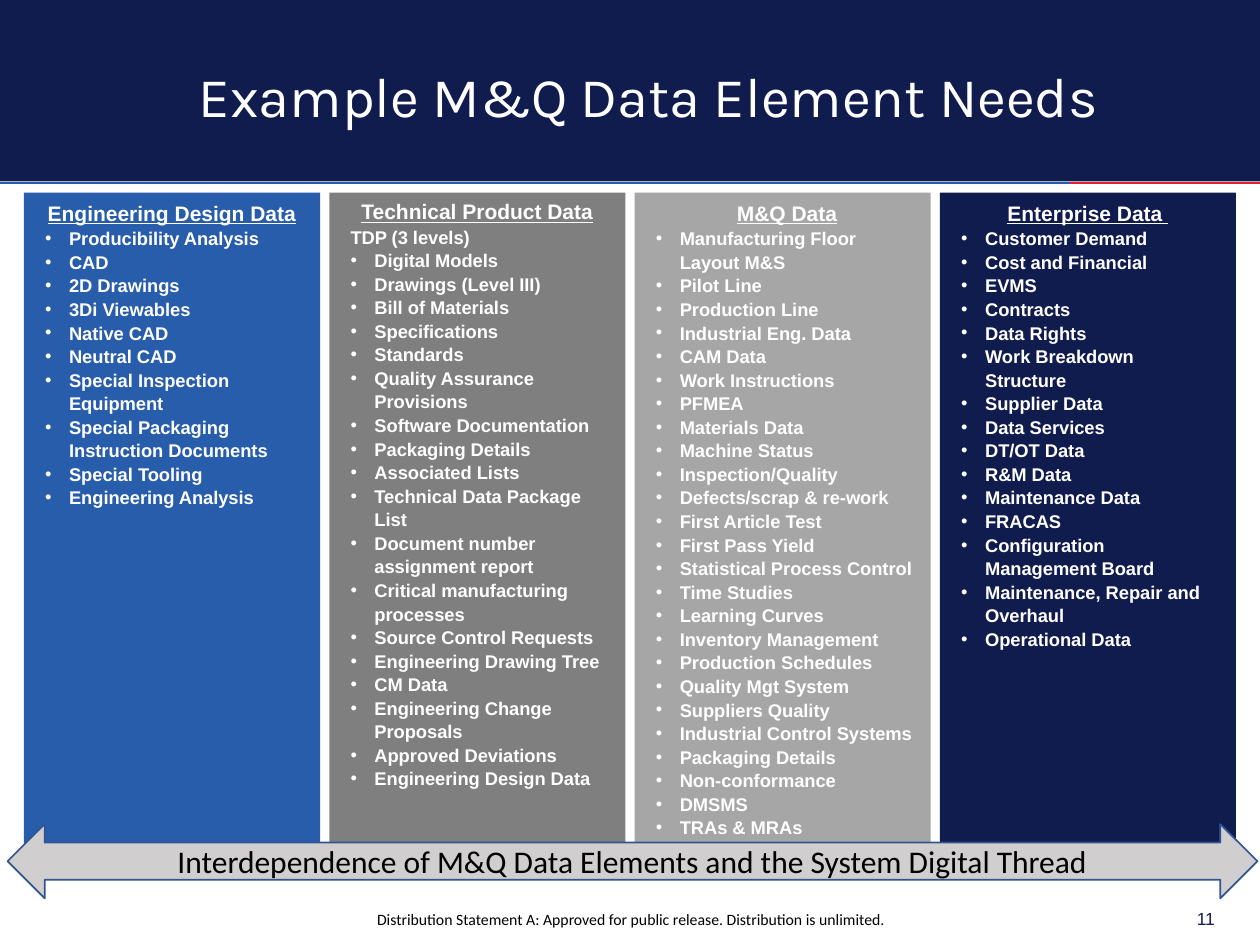
"""Build a slide with four columns of data needs above a wide arrow."""
from lxml import etree
from pptx import Presentation
from pptx.dml.color import RGBColor
from pptx.enum.shapes import MSO_CONNECTOR, MSO_SHAPE
from pptx.enum.text import MSO_ANCHOR, PP_ALIGN
from pptx.oxml.ns import qn
from pptx.util import Inches, Pt

RECT, ARROW = MSO_SHAPE.RECTANGLE, MSO_SHAPE.LEFT_RIGHT_ARROW
LINE = MSO_CONNECTOR.STRAIGHT
LEFT, MID, RIGHT = PP_ALIGN.LEFT, PP_ALIGN.CENTER, PP_ALIGN.RIGHT
TOP, CENTRE = MSO_ANCHOR.TOP, MSO_ANCHOR.MIDDLE

NAVY = RGBColor(0x11, 0x1C, 0x4E)
BLUE = RGBColor(0x27, 0x5D, 0xAB)
RULE = RGBColor(0x26, 0x5C, 0xAA)
RED = RGBColor(0xE2, 0x1E, 0x26)
DARK = RGBColor(0x7F, 0x7F, 0x7F)
GREY = RGBColor(0xA6, 0xA6, 0xA6)
PALE = RGBColor(0xD0, 0xCE, 0xCE)
EDGE = RGBColor(0x32, 0x54, 0x91)
WHITE = RGBColor(0xFF, 0xFF, 0xFF)
BLACK = RGBColor(0, 0, 0)

WIDE, HIGH = Inches(10), Inches(7.5)
COLS, ROWS = 100, 75
SIDE, BAR, INSET = 1.9, 23.5, 0.7
HANG = Inches(0.19)

HEAD = {"name": "Arial", "size": Pt(12), "bold": True, "underline": True}
ITEM = {"name": "Arial", "size": Pt(10.5), "bold": True}
TITLE = {"name": "Karla", "size": Pt(32)}
NOTE = {"name": "Calibri", "size": Pt(9)}
PAGE = {"name": "Arial", "size": Pt(10)}
BAND = {"name": "Calibri", "size": Pt(18)}

LISTS = [
    {"head": "Engineering Design Data", "fill": BLUE, "width": 22.1, "lead": [],
     "items": [
         "Producibility Analysis", "CAD", "2D Drawings", "3Di Viewables",
         "Native CAD", "Neutral CAD", "Special Inspection Equipment",
         "Special Packaging Instruction Documents", "Special Tooling",
         "Engineering Analysis"]},
    {"head": "Technical Product Data", "fill": DARK, "width": 22.1,
     "lead": ["TDP (3 levels)"],
     "items": [
         "Digital Models", "Drawings (Level III)", "Bill of Materials",
         "Specifications", "Standards", "Quality Assurance Provisions",
         "Software Documentation", "Packaging Details", "Associated Lists",
         "Technical Data Package List", "Document number assignment report",
         "Critical manufacturing processes", "Source Control Requests",
         "Engineering Drawing Tree", "CM Data", "Engineering Change Proposals",
         "Approved Deviations", "Engineering Design Data"]},
    {"head": "M&Q Data", "fill": GREY, "width": 22.8, "lead": [],
     "items": [
         "Manufacturing Floor Layout M&S", "Pilot Line", "Production Line",
         "Industrial Eng. Data", "CAM Data", "Work Instructions", "PFMEA",
         "Materials Data", "Machine Status", "Inspection/Quality",
         "Defects/scrap & re-work", "First Article Test", "First Pass Yield",
         "Statistical Process Control", "Time Studies", "Learning Curves",
         "Inventory Management", "Production Schedules", "Quality Mgt System",
         "Suppliers Quality", "Industrial Control Systems",
         "Packaging Details", "Non-conformance", "DMSMS", "TRAs & MRAs"]},
    {"head": "Enterprise Data ", "fill": NAVY, "width": 22.1, "lead": [],
     "items": [
         "Customer Demand", "Cost and Financial", "EVMS", "Contracts",
         "Data Rights", "Work Breakdown Structure", "Supplier Data",
         "Data Services", "DT/OT Data", "R&M Data", "Maintenance Data",
         "FRACAS", "Configuration Management Board",
         "Maintenance, Repair and Overhaul", "Operational Data"]},
]


def grid(x, y, w, h):
    """Turn grid columns and rows into slide lengths."""
    return (round(x * WIDE / COLS), round(y * HIGH / ROWS),
            round(w * WIDE / COLS), round(h * HIGH / ROWS))


def style(para, look, color, align=LEFT, space=1.0):
    """Set the font, alignment and line spacing of a paragraph."""
    para.alignment, para.line_spacing = align, space
    for key, value in look.items():
        setattr(para.font, key, value)
    para.font.color.rgb = color


def bullet(para):
    """Give a paragraph a round bullet with a hanging indent."""
    props = para._p.get_or_add_pPr()
    props.set("marL", str(HANG))
    props.set("indent", str(-HANG))
    etree.SubElement(props, qn("a:buFont")).set("typeface", "Arial")
    etree.SubElement(props, qn("a:buChar")).set("char", "•")


def shape(slide, kind, cell, fill, edge=None):
    """Add a filled preset shape."""
    form = slide.shapes.add_shape(kind, *grid(*cell))
    form.shadow.inherit = False
    form.fill.solid()
    form.fill.fore_color.rgb = fill
    if edge is None:
        form.line.fill.background()
    else:
        form.line.color.rgb = edge
        form.line.width = Pt(1)
    return form


def rule(slide, start, end, row, color):
    """Add a level line between two grid columns."""
    x, y, w, _ = grid(start, row, end - start, 0)
    line = slide.shapes.add_connector(LINE, x, y, x + w, y)
    line.line.color.rgb = color
    line.line.width = Pt(1)
    etree.SubElement(line._element.spPr, qn("a:effectLst"))


def frame(slide, cell, anchor=TOP):
    """Add a wrapping text box and return its frame."""
    text = slide.shapes.add_textbox(*grid(*cell)).text_frame
    text.word_wrap, text.vertical_anchor = True, anchor
    return text


def label(text, words, look, color, align=LEFT, space=1.0):
    """Write one paragraph into a text frame."""
    para = text.paragraphs[0]
    para.text = words
    style(para, look, color, align, space)


def column(slide, left, data):
    """Add one coloured panel with its heading and list."""
    shape(slide, RECT, (left, 15.3, BAR, 54.4), data["fill"])
    text = frame(slide, (left + INSET, 15.3, data["width"], 54.3))
    space = 1.0 if data["lead"] else 1.07
    label(text, data["head"], HEAD, WHITE, MID, space)
    for index, words in enumerate(data["lead"] + data["items"]):
        para = text.add_paragraph()
        para.text = words
        if index >= len(data["lead"]):
            bullet(para)
        style(para, ITEM, WHITE, space=1.07)


def main():
    """Build and save the slide."""
    deck = Presentation()
    deck.slide_width, deck.slide_height = WIDE, HIGH
    slide = deck.slides.add_slide(deck.slide_layouts[6])
    shape(slide, RECT, (0, 0, COLS, 14.4), NAVY)
    rule(slide, 0, 84.9, 14.5, RULE)
    rule(slide, 84.9, COLS, 14.5, RED)
    title = frame(slide, (14.8, 4.2, 83.1, 7.4), CENTRE)
    label(title, "Example M&Q Data Element Needs", TITLE, WHITE, space=0.9)
    step = (COLS - 2 * SIDE - BAR) / (len(LISTS) - 1)
    for index, data in enumerate(LISTS):
        column(slide, SIDE + index * step, data)
    band = shape(slide, ARROW, (0.6, 65.4, 99.2, 5.9), PALE, EDGE).text_frame
    band.word_wrap, band.vertical_anchor = True, CENTRE
    label(band, "Interdependence of M&Q Data Elements and the System Digital Thread",
          BAND, BLACK, MID)
    label(frame(slide, (15, 71.7, 70.1, 2.5)),
          "Distribution Statement A: Approved for public release. "
          "Distribution is unlimited.", NOTE, BLACK, MID)
    label(frame(slide, (84.9, 70.9, 12.5, 4), CENTRE), "11", PAGE, NAVY, RIGHT)
    deck.save("out.pptx")


if __name__ == "__main__":
    main()
